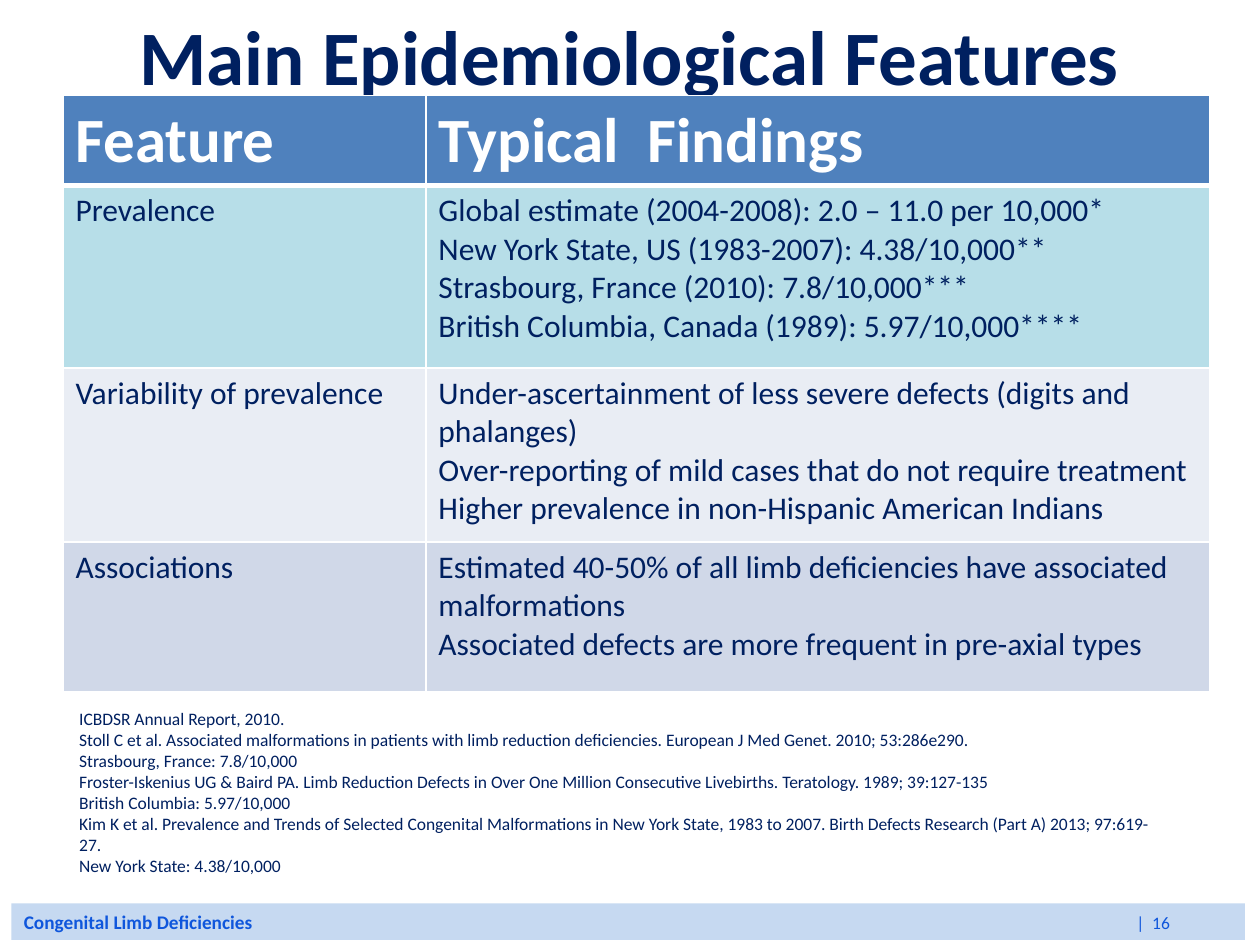
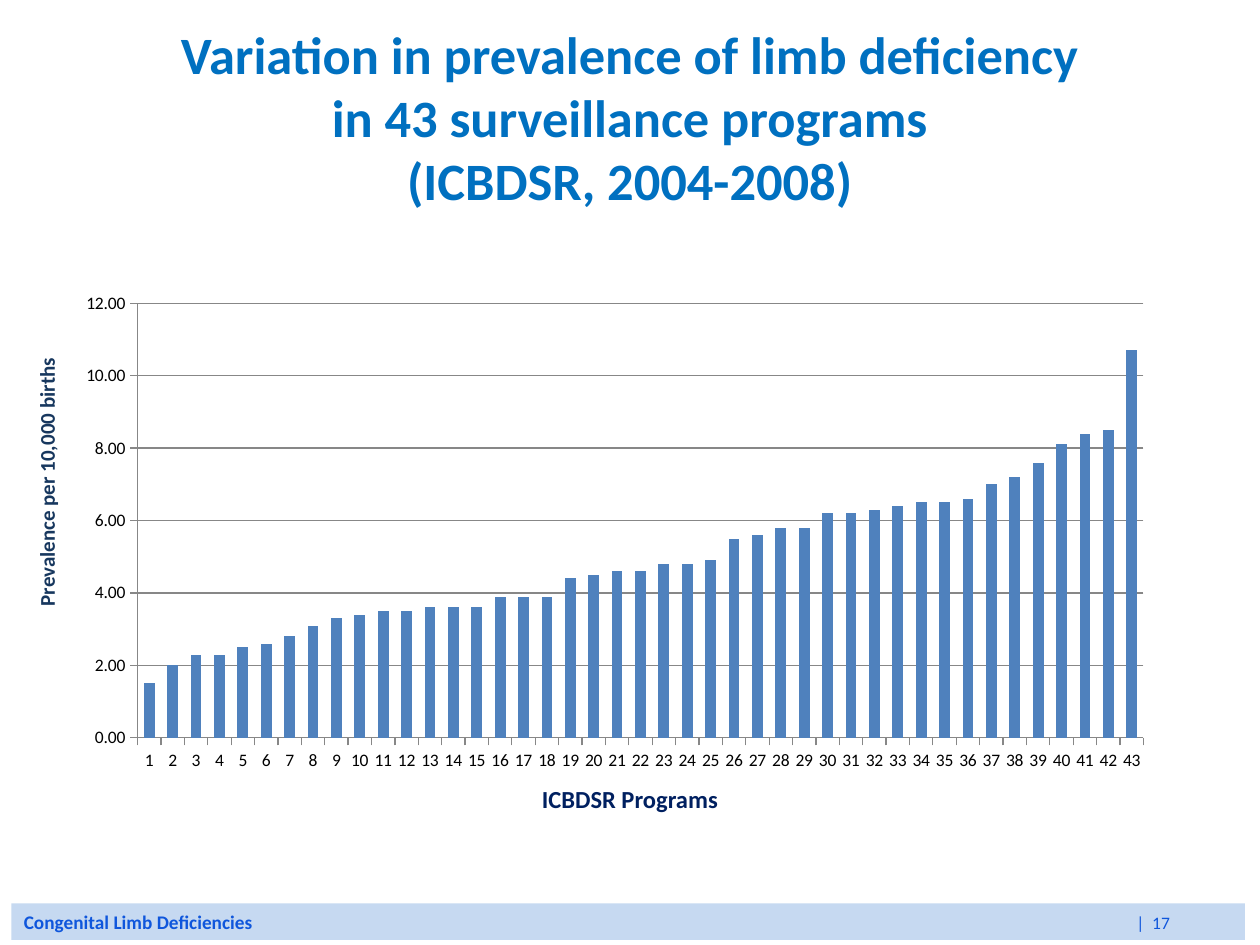
from lxml import etree
from pptx import Presentation
from pptx.chart.data import CategoryChartData
from pptx.dml.color import RGBColor
from pptx.enum.chart import XL_CHART_TYPE, XL_TICK_MARK
from pptx.enum.shapes import MSO_SHAPE
from pptx.enum.text import MSO_ANCHOR, MSO_AUTO_SIZE, PP_ALIGN
from pptx.oxml.ns import qn
from pptx.util import Inches, Pt

COLUMNS = XL_CHART_TYPE.COLUMN_CLUSTERED
TICK_OUT = XL_TICK_MARK.OUTSIDE
RECTANGLE = MSO_SHAPE.RECTANGLE
MIDDLE = MSO_ANCHOR.MIDDLE
NO_FIT = MSO_AUTO_SIZE.NONE
LEFT, CENTER = PP_ALIGN.LEFT, PP_ALIGN.CENTER

FONT = "Calibri"
WHITE = RGBColor(0xFF, 0xFF, 0xFF)
BLACK = RGBColor(0, 0, 0)
NAVY = RGBColor(0x00, 0x20, 0x60)
SLATE = RGBColor(0x17, 0x37, 0x5E)
SKY = RGBColor(0x00, 0x70, 0xC0)
STEEL = RGBColor(0x4F, 0x81, 0xBD)
GRID = RGBColor(0x87, 0x87, 0x87)
BAND = RGBColor(0xC6, 0xD9, 0xF1)
BAND_TEXT = RGBColor(0x0F, 0x56, 0xDC)
ROW_FILLS = [STEEL, RGBColor(0xB7, 0xDE, 0xE8),
             RGBColor(0xE9, 0xED, 0xF4), RGBColor(0xD0, 0xD8, 0xE8)]

FIRST_NUMBER = 16
TITLE_ONLY = 5
FOOTER_BOX = (0.09, 7.17, 9.79, 0.29)
NUMBER_TAB = 8.83

FEATURES = [
    ("Feature", ["Typical  Findings"]),
    ("Prevalence", [
        "Global estimate (2004-2008): 2.0 – 11.0 per 10,000*",
        "New York State, US (1983-2007): 4.38/10,000**",
        "Strasbourg, France (2010): 7.8/10,000***",
        "British Columbia, Canada (1989): 5.97/10,000****"]),
    ("Variability of prevalence", [
        "Under-ascertainment of less severe defects (digits and phalanges)",
        "Over-reporting of mild cases that do not require treatment",
        "Higher prevalence in non-Hispanic American Indians"]),
    ("Associations", [
        "Estimated 40-50% of all limb deficiencies have associated",
        "malformations",
        "Associated defects are more frequent in pre-axial types"]),
]
COLUMN_WIDTHS = [2.88, 6.22]
ROW_HEIGHTS = [0.71, 1.45, 1.38, 1.19]

REFERENCES = [
    "ICBDSR Annual Report, 2010.",
    "Stoll C et al. Associated malformations in patients with limb reduction "
    "deficiencies. European J Med Genet. 2010; 53:286e290.",
    "Strasbourg, France: 7.8/10,000",
    "Froster-Iskenius UG & Baird PA. Limb Reduction Defects in Over One Million "
    "Consecutive Livebirths. Teratology. 1989; 39:127-135",
    "British Columbia: 5.97/10,000",
    "Kim K et al. Prevalence and Trends of Selected Congenital Malformations in "
    "New York State, 1983 to 2007. Birth Defects Research (Part A) 2013; 97:619-27.",
    "New York State: 4.38/10,000",
]

PREVALENCE = [
    1.5, 2, 2.3, 2.3, 2.5, 2.6, 2.8, 3.1, 3.3, 3.4, 3.5, 3.5, 3.6, 3.6, 3.6,
    3.9, 3.9, 3.9, 4.4, 4.5, 4.6, 4.6, 4.8, 4.8, 4.9, 5.5, 5.6, 5.8, 5.8, 6.2,
    6.2, 6.3, 6.4, 6.5, 6.5, 6.6, 7, 7.2, 7.6, 8.1, 8.4, 8.5, 10.7]


def inches(box):
    return [Inches(length) for length in box]


def style(font, size, color, bold=False):
    formats = {"name": FONT, "size": Pt(size), "bold": bold}
    for name, value in formats.items():
        setattr(font, name, value)
    font.color.rgb = color


def write(frame, lines, size, color, bold=False, align=LEFT):
    frame.text = "\n".join(lines)
    for para in frame.paragraphs:
        para.alignment = align
        for span in para.runs:
            style(span.font, size, color, bold)


def set_title(page, box, lines, size, color):
    title = page.shapes.title
    places = dict(zip(("left", "top", "width", "height"), inches(box)))
    for name, value in places.items():
        setattr(title, name, value)
    frame = title.text_frame
    frame.auto_size = NO_FIT
    frame.vertical_anchor = MIDDLE
    write(frame, ["\v".join(lines)], size, color, True, CENTER)


def add_label(page, box, lines, size, color, bold=False, align=LEFT, wrap=True):
    label = page.shapes.add_textbox(*inches(box))
    label.text_frame.word_wrap = wrap
    write(label.text_frame, lines, size, color, bold, align)
    return label


def add_footer(page, box, number):
    band = page.shapes.add_shape(RECTANGLE, *inches(box))
    band.shadow.inherit = False
    band.fill.solid()
    band.fill.fore_color.rgb = BAND
    band.line.fill.background()
    band.text_frame.vertical_anchor = MIDDLE
    para = band.text_frame.paragraphs[0]
    para.alignment = LEFT
    tabs = etree.SubElement(para._p.get_or_add_pPr(), qn("a:tabLst"))
    etree.SubElement(tabs, qn("a:tab"), pos=str(Inches(NUMBER_TAB)), algn="l")
    for text, size, bold in (("Congenital Limb Deficiencies", 11, True),
                             (f"\t|  {number}", 10, False)):
        span = para.add_run()
        span.text = text
        style(span.font, size, BAND_TEXT, bold)


def set_borders(cell, top, bottom):
    properties = cell._tc.get_or_add_tcPr()
    widths = {"lnL": 1, "lnR": 1, "lnT": top, "lnB": bottom}
    for index, (side, width) in enumerate(widths.items()):
        line = etree.Element(qn(f"a:{side}"), w=str(Pt(width)))
        fill = etree.SubElement(line, qn("a:solidFill"))
        etree.SubElement(fill, qn("a:srgbClr"), val=str(WHITE))
        properties.insert(index, line)


def add_feature_table(page, box):
    table = page.shapes.add_table(
        len(ROW_HEIGHTS), len(COLUMN_WIDTHS), *inches(box)).table
    for column, width in zip(table.columns, COLUMN_WIDTHS):
        column.width = Inches(width)
    for index, (feature, findings) in enumerate(FEATURES):
        table.rows[index].height = Inches(ROW_HEIGHTS[index])
        header = index == 0
        size, color = (36, WHITE) if header else (18, NAVY)
        for cell, lines in zip(table.rows[index].cells, ([feature], findings)):
            cell.fill.solid()
            cell.fill.fore_color.rgb = ROW_FILLS[index]
            write(cell.text_frame, lines, size, color, header)
            set_borders(cell, 3 if index == 1 else 1, 3 if header else 1)


def add_prevalence_chart(page, box):
    data = CategoryChartData(number_format="0.00")
    data.categories = [str(rank + 1) for rank in range(len(PREVALENCE))]
    data.add_series("Series 1", PREVALENCE)
    chart = page.shapes.add_chart(COLUMNS, *inches(box), data).chart
    chart.has_legend = False
    chart.has_title = False
    style(chart.font, 10, BLACK)
    plot = chart.plots[0]
    plot.gap_width = 118
    plot.vary_by_categories = False
    bars = plot.series[0].format.fill
    bars.solid()
    bars.fore_color.rgb = STEEL
    values = chart.value_axis
    scale = {"minimum_scale": 0, "maximum_scale": 12, "major_unit": 2,
             "has_major_gridlines": True}
    for name, value in scale.items():
        setattr(values, name, value)
    values.tick_labels.number_format = "0.00"
    values.tick_labels.number_format_is_linked = False
    values.major_gridlines.format.line.color.rgb = GRID
    for axis in (chart.category_axis, values):
        axis.major_tick_mark = TICK_OUT
        axis.format.line.color.rgb = GRID


def build_features(page):
    set_title(page, (0.5, 0, 9, 0.87), ["Main Epidemiological Features"], 44, NAVY)
    add_feature_table(page, (0.5, 0.76, 9.1, 4.73))
    add_label(page, (0.53, 5.57, 8.81, 1.5), REFERENCES, 10, NAVY)


def build_variation(page):
    set_title(page, (0.5, 0.3, 9, 1.25),
              ["Variation in prevalence of limb deficiency",
               "in 43 surveillance programs", "(ICBDSR, 2004-2008)"], 30, SKY)
    add_prevalence_chart(page, (0.51, 2.25, 8.74, 3.94))
    axis_label = add_label(page, (-0.73, 3.66, 2.2, 0.3),
                           ["Prevalence per 10,000 births"], 12, SLATE, True,
                           wrap=False)
    axis_label.rotation = 270
    add_label(page, (2.4, 6.17, 5.2, 0.34), ["ICBDSR Programs"], 14, NAVY,
              True, CENTER)


def main():
    deck = Presentation()
    deck.slide_width, deck.slide_height = inches((10, 7.5))
    for number, build in enumerate((build_features, build_variation), FIRST_NUMBER):
        page = deck.slides.add_slide(deck.slide_layouts[TITLE_ONLY])
        build(page)
        add_footer(page, FOOTER_BOX, number)
    deck.save("out.pptx")


if __name__ == "__main__":
    main()
